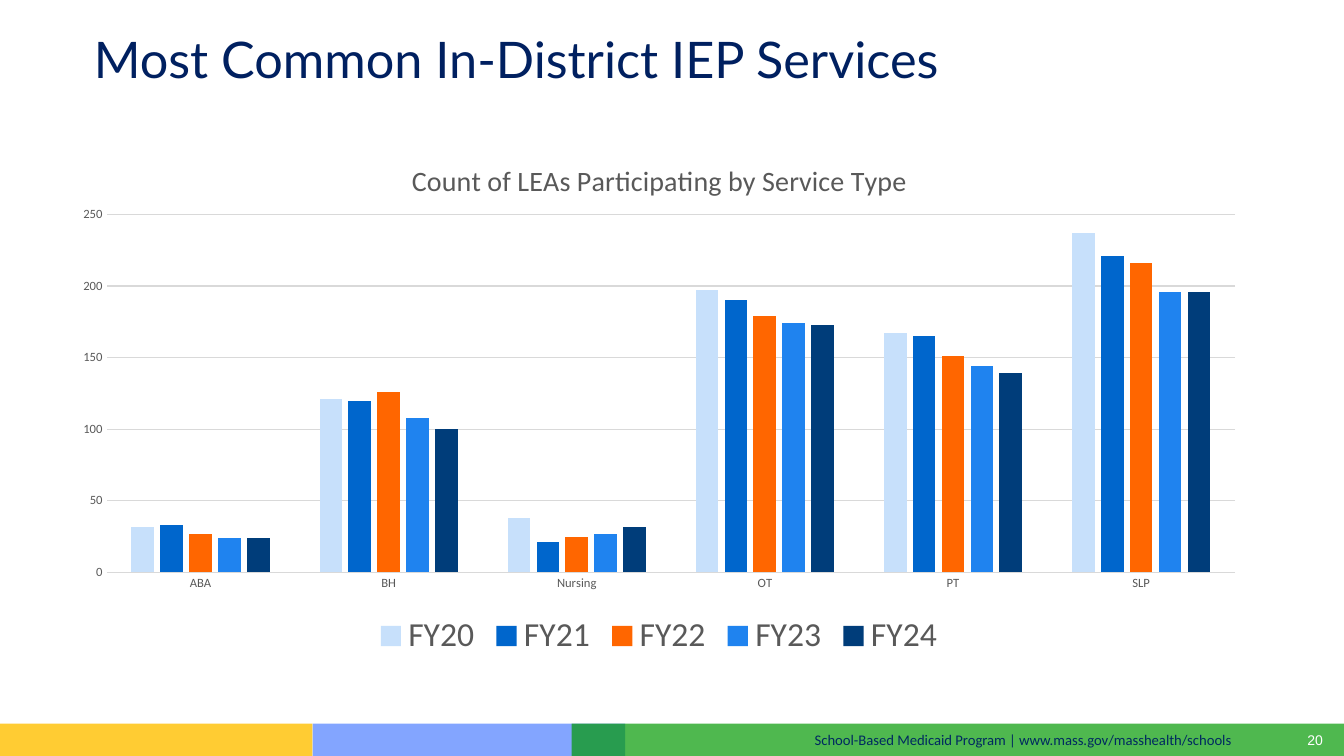
from dataclasses import dataclass

from lxml import etree
from pptx import Presentation
from pptx.chart.data import CategoryChartData
from pptx.dml.color import RGBColor
from pptx.enum.chart import XL_CHART_TYPE, XL_LEGEND_POSITION, XL_TICK_MARK
from pptx.enum.shapes import MSO_SHAPE
from pptx.enum.text import MSO_ANCHOR, MSO_AUTO_SIZE, PP_ALIGN
from pptx.oxml.ns import qn
from pptx.util import Inches, Pt


@dataclass(frozen=True)
class Theme:
    heading_font: str = "Lato"
    body_font: str = "Calibri"
    number_font: str = "Arial"
    navy: str = "002060"
    footer_navy: str = "002960"
    white: str = "FFFFFF"
    gray: str = "595959"
    grid: str = "D9D9D9"
    yellow: str = "FFC000"
    blue: str = "5E8BFF"
    green: str = "009900"
    title_size: float = 36
    legend_size: float = 24
    chart_title_size: float = 20
    footer_size: float = 10.5
    number_size: float = 10
    axis_size: float = 9


THEME = Theme()

SERVICES = ["ABA", "BH", "Nursing", "OT", "PT", "SLP"]
# Fiscal year: (bar colour, LEAs per service)
LEA_COUNTS = {
    "FY20": ("C7E0FB", [32, 121, 38, 197, 167, 237]),
    "FY21": ("0066CC", [33, 120, 21, 190, 165, 221]),
    "FY22": ("FF6600", [27, 126, 25, 179, 151, 216]),
    "FY23": ("1F83EF", [24, 108, 27, 174, 144, 196]),
    "FY24": ("003D7A", [24, 100, 32, 173, 139, 196]),
}


def style_font(font, face, size, color):
    font.name = face
    font.size = Pt(size)
    font.bold = False
    font.color.rgb = RGBColor.from_string(color)


def write_text(frame, text, *, face, size, color, align=PP_ALIGN.LEFT,
               anchor=MSO_ANCHOR.TOP, inset=None, wrap=True, line_spacing=None):
    frame.word_wrap = wrap
    frame.auto_size = MSO_AUTO_SIZE.NONE
    frame.vertical_anchor = anchor
    if inset is not None:
        frame.margin_left = frame.margin_right = Inches(inset)
        frame.margin_top = frame.margin_bottom = Inches(inset)
    paragraph = frame.paragraphs[0]
    paragraph.alignment = align
    if line_spacing:
        paragraph.line_spacing = line_spacing
    run = paragraph.add_run()
    run.text = text
    style_font(run.font, face, size, color)


def add_text(slide, text, left, top, width, height, **text_format):
    box = slide.shapes.add_textbox(Inches(left), Inches(top), Inches(width), Inches(height))
    write_text(box.text_frame, text, **text_format)


def add_band(slide, left, width, color, opacity):
    band = slide.shapes.add_shape(MSO_SHAPE.RECTANGLE, Inches(left), Inches(7.18),
                                  Inches(width), Inches(0.32))
    band.shadow.inherit = False
    band.line.fill.background()
    band.fill.solid()
    band.fill.fore_color.rgb = RGBColor.from_string(color)
    swatch = band.fill._xPr.find(".//" + qn("a:srgbClr"))
    etree.SubElement(swatch, qn("a:alpha")).set("val", str(opacity * 1000))


def manual_layout(inner=False, **fractions):
    """Build a chart layout from fractions of the chart area."""
    layout = etree.Element(qn("c:layout"))
    manual = etree.SubElement(layout, qn("c:manualLayout"))
    settings = {"layoutTarget": "inner"} if inner else {}
    settings.update(xMode="edge", yMode="edge", **fractions)
    for tag, value in settings.items():
        etree.SubElement(manual, qn(f"c:{tag}")).set("val", str(value))
    return layout


def drop_layout(parent):
    for layout in parent.findall(qn("c:layout")):
        parent.remove(layout)


def style_axis(axis):
    axis.major_tick_mark = axis.minor_tick_mark = XL_TICK_MARK.NONE
    style_font(axis.tick_labels.font, THEME.body_font, THEME.axis_size, THEME.gray)


def style_line(line):
    line.color.rgb = RGBColor.from_string(THEME.grid)
    line.width = Pt(0.75)


def add_service_chart(slide):
    counts = CategoryChartData()
    counts.categories = SERVICES
    for year, (_, values) in LEA_COUNTS.items():
        counts.add_series(year, values)
    chart = slide.shapes.add_chart(XL_CHART_TYPE.COLUMN_CLUSTERED, Inches(0.58), Inches(1.28),
                                   Inches(11.91), Inches(5.3), counts).chart
    chart.font.name = THEME.body_font

    # Bars
    plot = chart.plots[0]
    plot.vary_by_categories = False
    plot.gap_width = 219
    plot.overlap = -27
    for series, (color, _) in zip(plot.series, LEA_COUNTS.values()):
        series.format.fill.solid()
        series.format.fill.fore_color.rgb = RGBColor.from_string(color)

    # Axes and gridlines
    style_axis(chart.category_axis)
    style_line(chart.category_axis.format.line)
    style_axis(chart.value_axis)
    chart.value_axis.format.line.fill.background()
    chart.value_axis.minimum_scale = 0
    chart.value_axis.maximum_scale = 250
    chart.value_axis.major_unit = 50
    style_line(chart.value_axis.major_gridlines.format.line)

    # Legend
    chart.has_legend = True
    chart.legend.position = XL_LEGEND_POSITION.BOTTOM
    chart.legend.include_in_layout = False
    style_font(chart.legend.font, THEME.body_font, THEME.legend_size, THEME.gray)

    # Chart title
    heading = chart.chart_title.text_frame.paragraphs[0].add_run()
    heading.text = "Count of LEAs Participating by Service Type"
    style_font(heading.font, THEME.body_font, THEME.chart_title_size, THEME.gray)

    # Places of the chart title and the plot
    title_xml = chart.chart_title._element
    drop_layout(title_xml)
    title_xml.find(qn("c:tx")).addnext(manual_layout(x=0.29, y=0.05))
    plot_area = chart._chartSpace.find(".//" + qn("c:plotArea"))
    drop_layout(plot_area)
    plot_area.insert(0, manual_layout(inner=True, x=0.04, y=0.16, w=0.94, h=0.67))


def add_footer(slide):
    add_band(slide, 3.1, 3.1, THEME.blue, 77)
    add_band(slide, 0, 3.1, THEME.yellow, 80)
    add_band(slide, 5.67, 7.67, THEME.green, 69)
    add_text(slide, "20", 12.95, 7.26, 0.17, 0.17, face=THEME.number_font,
             size=THEME.number_size, color=THEME.white, align=PP_ALIGN.RIGHT,
             anchor=MSO_ANCHOR.MIDDLE, inset=0, wrap=False)
    add_text(slide, "School-Based Medicaid Program | www.mass.gov/masshealth/schools",
             8.08, 7.25, 4.32, 0.18, face=THEME.body_font, size=THEME.footer_size,
             color=THEME.footer_navy, inset=0)


def add_title(slide):
    title = slide.shapes.title
    title.left, title.top = Inches(0.83), Inches(0.42)
    title.width, title.height = Inches(11.66), Inches(0.4)
    write_text(title.text_frame, "Most Common In-District IEP Services",
               face=THEME.heading_font, size=THEME.title_size, color=THEME.navy,
               anchor=MSO_ANCHOR.MIDDLE, line_spacing=0.9)


def main():
    deck = Presentation()
    deck.slide_width, deck.slide_height = Inches(13.33), Inches(7.5)
    slide = deck.slides.add_slide(deck.slide_layouts[5])
    add_title(slide)
    add_service_chart(slide)
    add_footer(slide)
    deck.save("out.pptx")


if __name__ == "__main__":
    main()
